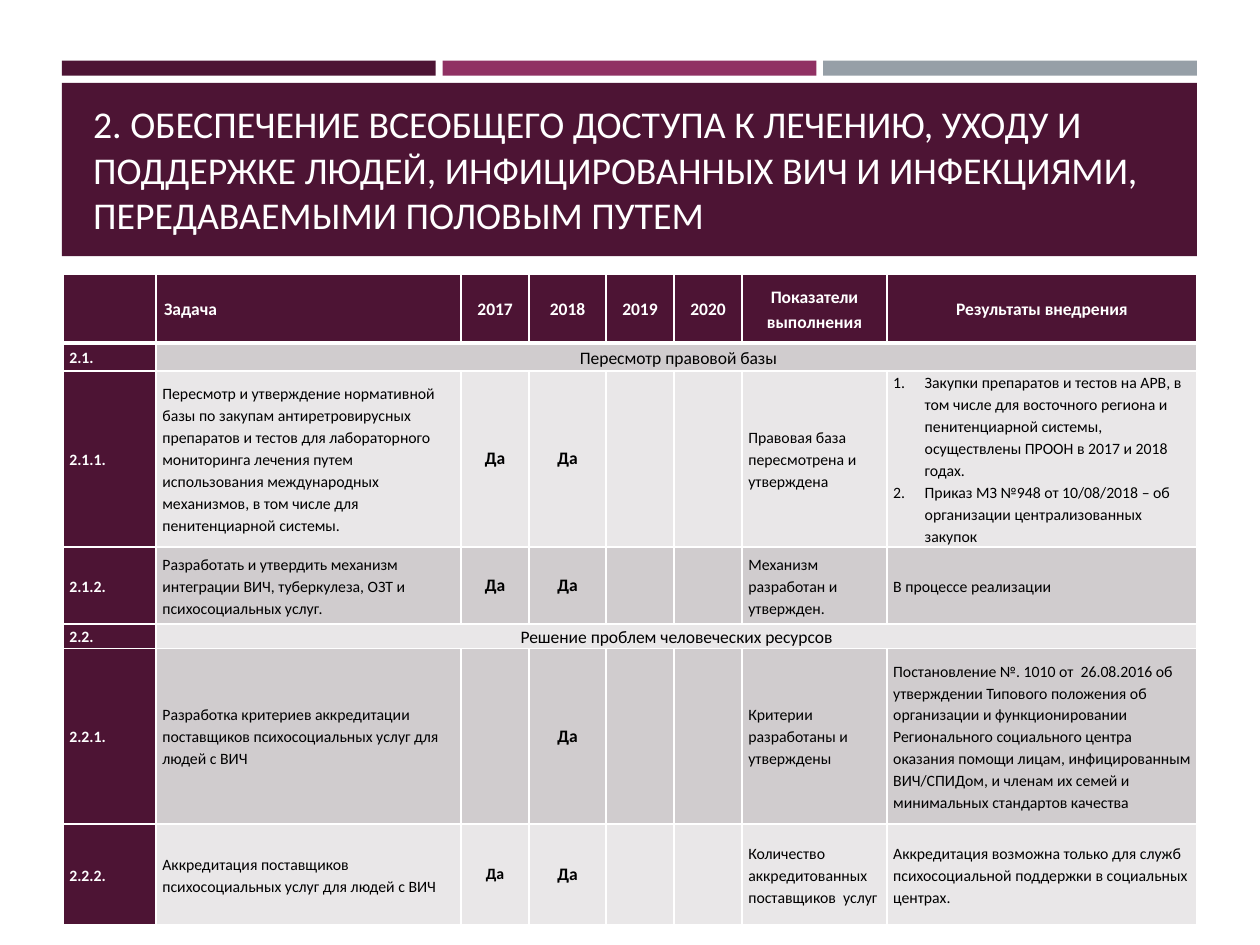
from lxml import etree
from pptx import Presentation
from pptx.dml.color import RGBColor
from pptx.enum.shapes import MSO_SHAPE
from pptx.enum.text import MSO_ANCHOR, MSO_AUTO_SIZE, PP_ALIGN
from pptx.oxml.ns import qn
from pptx.util import Pt

RECT = MSO_SHAPE.RECTANGLE
LEFT, CENTER = PP_ALIGN.LEFT, PP_ALIGN.CENTER
MIDDLE, BOTTOM = MSO_ANCHOR.MIDDLE, MSO_ANCHOR.BOTTOM
NO_FIT = MSO_AUTO_SIZE.NONE

PLUM = RGBColor(0x4D, 0x14, 0x34)
BERRY = RGBColor(0x90, 0x31, 0x63)
GREY = RGBColor(0x96, 0x9F, 0xA7)
BAND_DARK = RGBColor(0xD0, 0xCC, 0xCE)
BAND_LIGHT = RGBColor(0xE9, 0xE7, 0xE8)
WHITE = RGBColor(0xFF, 0xFF, 0xFF)
BLACK = RGBColor(0, 0, 0)

FONT = "Calibri"
SPACING = 1.15
YEARS = ["2017", "2018", "2019", "2020"]
COLUMNS = [53.2, 174.3, 38.9, 43.9, 38.9, 38.9, 82.8, 177.1]
ROWS = [39.5, 16, 100, 44, 14, 100.5, 57.5]

TITLE = ("2. ОБЕСПЕЧЕНИЕ ВСЕОБЩЕГО ДОСТУПА К ЛЕЧЕНИЮ, УХОДУ И ПОДДЕРЖКЕ ЛЮДЕЙ, "
         "ИНФИЦИРОВАННЫХ ВИЧ И ИНФЕКЦИЯМИ, ПЕРЕДАВАЕМЫМИ ПОЛОВЫМ ПУТЕМ")
HEADERS = ["", "Задача", *YEARS, "Показатели выполнения", "Результаты внедрения"]

# Section: number, heading. Task: number, task, {year: text size}, indicator, results
BODY = [
    ("2.1.", " Пересмотр правовой базы"),
    ("2.1.1.",
     "Пересмотр и утверждение нормативной базы по закупам антиретровирусных препаратов "
     "и тестов для лабораторного мониторинга лечения путем использования международных "
     "механизмов, в том числе для пенитенциарной системы.",
     {"2017": 10, "2018": 10},
     "Правовая база пересмотрена и утверждена",
     ["Закупки препаратов и тестов на АРВ, в том числе для восточного региона и "
      "пенитенциарной системы, осуществлены ПРООН в 2017 и 2018 годах.",
      "Приказ МЗ №948 от 10/08/2018 – об организации централизованных закупок"]),
    ("2.1.2.",
     "Разработать и утвердить механизм интеграции ВИЧ, туберкулеза, ОЗТ и "
     "психосоциальных услуг.",
     {"2017": 10, "2018": 10},
     "Механизм разработан и утвержден.",
     ["В процессе реализации"]),
    ("2.2.", "Решение проблем человеческих ресурсов"),
    ("2.2.1.",
     "Разработка критериев аккредитации поставщиков психосоциальных услуг для людей с ВИЧ",
     {"2018": 10},
     "Критерии разработаны и утверждены",
     ["Постановление №. 1010 от  26.08.2016 об утверждении Типового положения об "
      "организации и функционировании Регионального социального центра оказания помощи "
      "лицам, инфицированным ВИЧ/СПИДом, и членам их семей и минимальных стандартов "
      "качества"]),
    ("2.2.2.",
     "Аккредитация поставщиков психосоциальных услуг для людей с ВИЧ",
     {"2017": 9, "2018": 10},
     "Количество аккредитованных поставщиков  услуг",
     ["Аккредитация возможна только для служб психосоциальной поддержки в социальных "
      "центрах."]),
]


def write(p, text, size=9, color=BLACK, bold=False, align=LEFT, spacing=SPACING,
          numbered=False):
    p.alignment = align
    p.line_spacing = spacing
    if numbered:
        pPr = p._p.get_or_add_pPr()
        pPr.set("marL", str(Pt(18)))
        pPr.set("indent", str(-Pt(18)))
        etree.SubElement(pPr, qn("a:buAutoNum"), type="arabicPeriod")
    if not text:
        etree.SubElement(p._p, qn("a:endParaRPr"), sz=str(size * 100))
        return
    r = p.add_run()
    r.text = text
    r.font.name = FONT
    r.font.size = Pt(size)
    r.font.bold = bold
    r.font.color.rgb = color


class Deck:
    def __init__(self, prs):
        self.s = prs.slides.add_slide(prs.slide_layouts[5])

    def bar(self, x, y, w, h, color):
        sp = self.s.shapes.add_shape(RECT, Pt(x), Pt(y), Pt(w), Pt(h))
        sp.shadow.inherit = False
        sp.fill.solid()
        sp.fill.fore_color.rgb = color
        sp.line.fill.background()

    def title(self, text, x, y, w, h):
        sp = self.s.shapes.title
        sp.left, sp.top, sp.width, sp.height = Pt(x), Pt(y), Pt(w), Pt(h)
        tf = sp.text_frame
        tf.word_wrap = True
        tf.auto_size = NO_FIT
        tf.vertical_anchor = BOTTOM
        write(tf.paragraphs[0], text, size=21.6, color=WHITE, spacing=1.0)
        # Bring the title in front of its band
        self.s.shapes._spTree.append(sp._element)

    def table(self, x, y, columns, rows):
        frame = self.s.shapes.add_table(len(rows), len(columns), Pt(x), Pt(y),
                                        Pt(sum(columns)), Pt(sum(rows)))
        tbl = frame.table
        for col, width in zip(tbl.columns, columns):
            col.width = Pt(width)
        for row, height in zip(tbl.rows, rows):
            row.height = Pt(height)
        return tbl

    def borders(self, cell, top=1, bottom=1):
        tcPr = cell._tc.get_or_add_tcPr()
        for side, width in (("L", 1), ("R", 1), ("T", top), ("B", bottom)):
            ln = etree.SubElement(tcPr, qn(f"a:ln{side}"), w=str(Pt(width)))
            fill = etree.SubElement(ln, qn("a:solidFill"))
            etree.SubElement(fill, qn("a:srgbClr"), val=str(WHITE))

    def cell(self, cell, texts, fill, inset=3.6, top=1, bottom=1, **fmt):
        self.borders(cell, top, bottom)
        cell.fill.solid()
        cell.fill.fore_color.rgb = fill
        cell.margin_left = cell.margin_right = Pt(inset)
        cell.margin_top = cell.margin_bottom = 0
        cell.vertical_anchor = MIDDLE
        tf = cell.text_frame
        for i, text in enumerate(texts):
            p = tf.add_paragraph() if i else tf.paragraphs[0]
            write(p, text, numbered=len(texts) > 1, **fmt)


def main():
    prs = Presentation()
    prs.slide_width, prs.slide_height = Pt(720), Pt(540)
    deck = Deck(prs)

    # Three accent bars and the title band
    for i, color in enumerate((PLUM, BERRY, GREY)):
        deck.bar(35.4 + i * 217.5, 34.7, 213.6, 8.5, color)
    deck.bar(35.4, 47.4, 648.6, 99, PLUM)
    deck.title(TITLE, 46, 54, 629.5, 85)

    # Table header
    tbl = deck.table(36, 156.5, COLUMNS, ROWS)
    for c, text in enumerate(HEADERS):
        deck.cell(tbl.cell(0, c), [text], PLUM, inset=4.6, bottom=3, size=10,
                  color=WHITE, bold=True, align=CENTER if c > 1 else LEFT)

    # Sections and tasks on alternating bands
    for n, (number, text, *details) in enumerate(BODY, 1):
        band = BAND_DARK if n % 2 else BAND_LIGHT
        top = 3 if n == 1 else 1
        cells = [tbl.cell(n, c) for c in range(len(COLUMNS))]
        deck.cell(cells[0], [number], PLUM, top=top, color=WHITE, bold=True)
        if not details:
            deck.cell(cells[1], [text], band, top=top, size=10, align=CENTER)
            for cell in cells[2:]:
                deck.cell(cell, [""], band, top=top)
            cells[1].merge(cells[-1])
            continue
        marks, indicator, results = details
        deck.cell(cells[1], [text], band)
        for cell, year in zip(cells[2:], YEARS):
            deck.cell(cell, ["Да" if year in marks else ""], band, bold=True,
                      size=marks.get(year, 10), align=CENTER, spacing=1.0)
        deck.cell(cells[6], [indicator], band)
        deck.cell(cells[7], results, band)

    prs.save("out.pptx")


if __name__ == "__main__":
    main()
